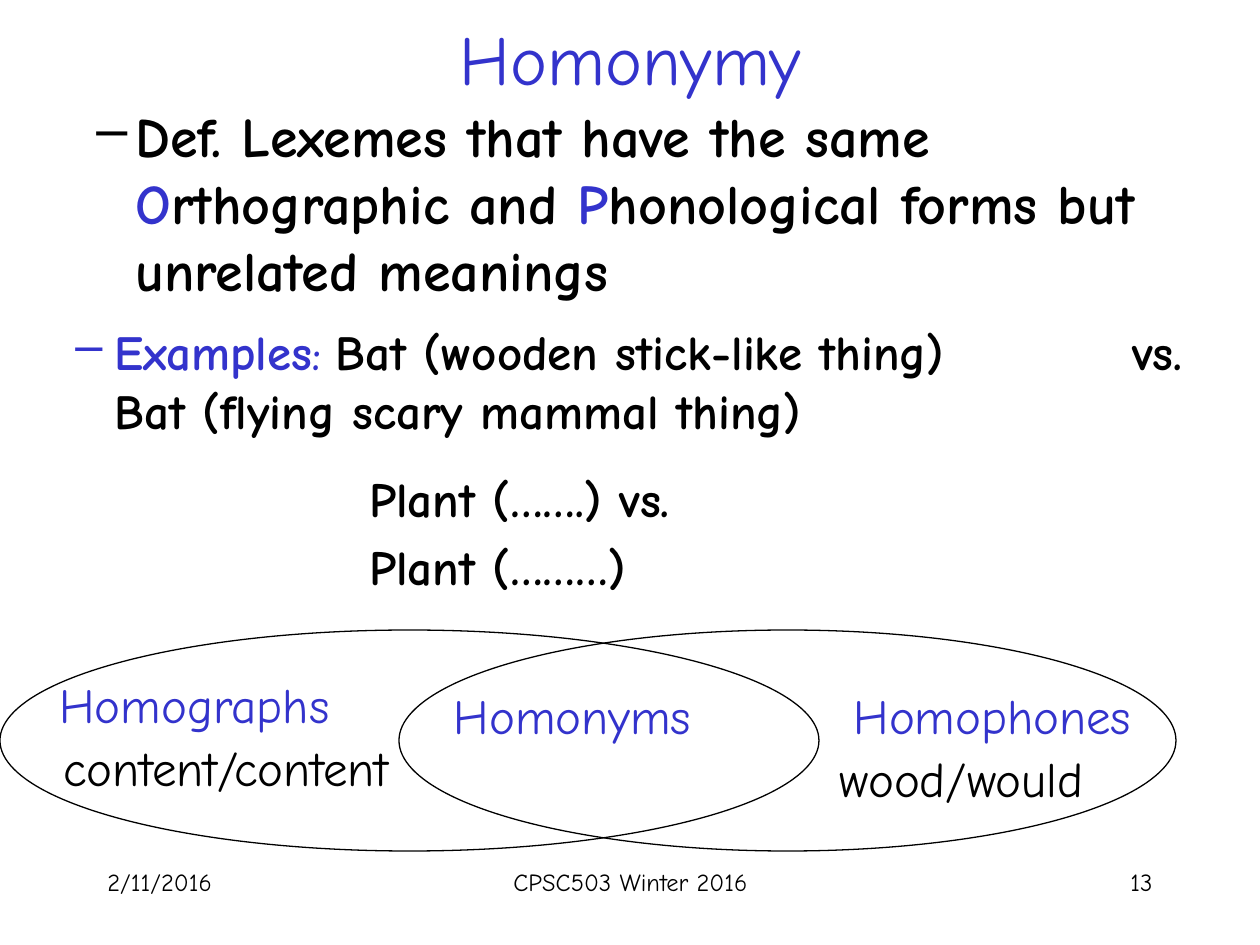
from lxml import etree
from pptx import Presentation
from pptx.dml.color import RGBColor
from pptx.enum.shapes import MSO_SHAPE as Shape
from pptx.enum.text import MSO_ANCHOR as Anchor, PP_ALIGN as Align
from pptx.oxml.ns import qn
from pptx.util import Emu, Pt

PX = 914400 // 126
FONT = "Comic Neue"
COLORS = {"black": "000000", "blue": "3333CC"}


def px(*lengths):
    return [Emu(length * PX) for length in lengths]


def add_text(slide, box, paragraphs, align=Align.LEFT, anchor=Anchor.TOP):
    """Each paragraph is a list of (text, size, color, bold) runs."""
    frame = slide.shapes.add_textbox(*px(*box)).text_frame
    frame.word_wrap = True
    frame.vertical_anchor = anchor
    for index, runs in enumerate(paragraphs):
        paragraph = frame.add_paragraph() if index else frame.paragraphs[0]
        paragraph.alignment = align
        for text, size, color, bold in runs:
            run = paragraph.add_run()
            run.text = text
            run.font.name = FONT
            run.font.size = Pt(size)
            run.font.bold = bold
            run.font.color.rgb = RGBColor.from_string(COLORS[color])
    return frame


def add_label(slide, box, text, size=28, color="black", align=Align.CENTER,
              anchor=Anchor.MIDDLE):
    add_text(slide, box, [[(text, size, color, False)]], align, anchor)


def add_outline(slide, box, paragraphs, left, hanging, bullet=None):
    """Bold body text with a hanging indent and an optional bullet."""
    runs = [[(text, size, color, True) for text, size, color in paragraph]
            for paragraph in paragraphs]
    for paragraph in add_text(slide, box, runs).paragraphs:
        paragraph.space_before = Pt(paragraph.runs[0].font.size.pt * 0.2)
        properties = paragraph._p.get_or_add_pPr()
        properties.set("marL", str(left * PX))
        properties.set("indent", str(-hanging * PX))
        if bullet:
            etree.SubElement(properties, qn("a:buChar")).set("char", bullet)


def add_ellipse(slide, box):
    ellipse = slide.shapes.add_shape(Shape.OVAL, *px(*box))
    ellipse.shadow.inherit = False
    ellipse.fill.background()
    ellipse.line.color.rgb = RGBColor.from_string(COLORS["black"])
    ellipse.line.width = Pt(0.75)


def main():
    presentation = Presentation()
    presentation.slide_width, presentation.slide_height = px(1260, 945)
    slide = presentation.slides.add_slide(presentation.slide_layouts[6])

    # Footer
    for left, width, text, align in (
            (95, 262, "2/11/2016", Align.LEFT),
            (431, 399, "CPSC503 Winter 2016", Align.CENTER),
            (903, 262, "13", Align.RIGHT)):
        add_label(slide, (left, 861, width, 63), text, 14, align=align,
                  anchor=Anchor.TOP)

    # Title
    add_label(slide, (95, 0, 1071, 116), "Homonymy", 40, "blue")

    # Definition and examples
    add_outline(slide, (21, 95, 1239, 179), [[
        ("Def. Lexemes that have the same ", 32, "black"),
        ("O", 32, "blue"),
        ("rthographic and ", 32, "black"),
        ("P", 32, "blue"),
        ("honological forms but unrelated meanings", 32, "black")]],
        102, 39, "–")
    add_outline(slide, (0, 315, 1229, 231), [[
        ("Examples", 28, "blue"),
        (": ", 24, "blue"),
        ("Bat (wooden stick-like thing) \t\t\t vs. "
         "Bat (flying scary mammal thing)", 28, "black")]],
        102, 39, "–")
    add_outline(slide, (231, 462, 683, 137), [
        [("Plant (…….) vs.", 28, "black")],
        [("Plant (………)", 28, "black")]], 158, 32)

    # Overlapping sets
    for left, top, width, text, color in (
            (819, 662, 347, "Homophones", "blue"),
            (788, 725, 347, "wood/would", "black"),
            (21, 651, 347, "Homographs", "blue"),
            (21, 714, 410, "content/content", "black"),
            (399, 662, 347, "Homonyms", "blue")):
        add_label(slide, (left, top, width, 105), text, color=color)
    for left, width in ((0, 819), (399, 777)):
        add_ellipse(slide, (left, 630, width, 221))

    presentation.save("out.pptx")


if __name__ == "__main__":
    main()
